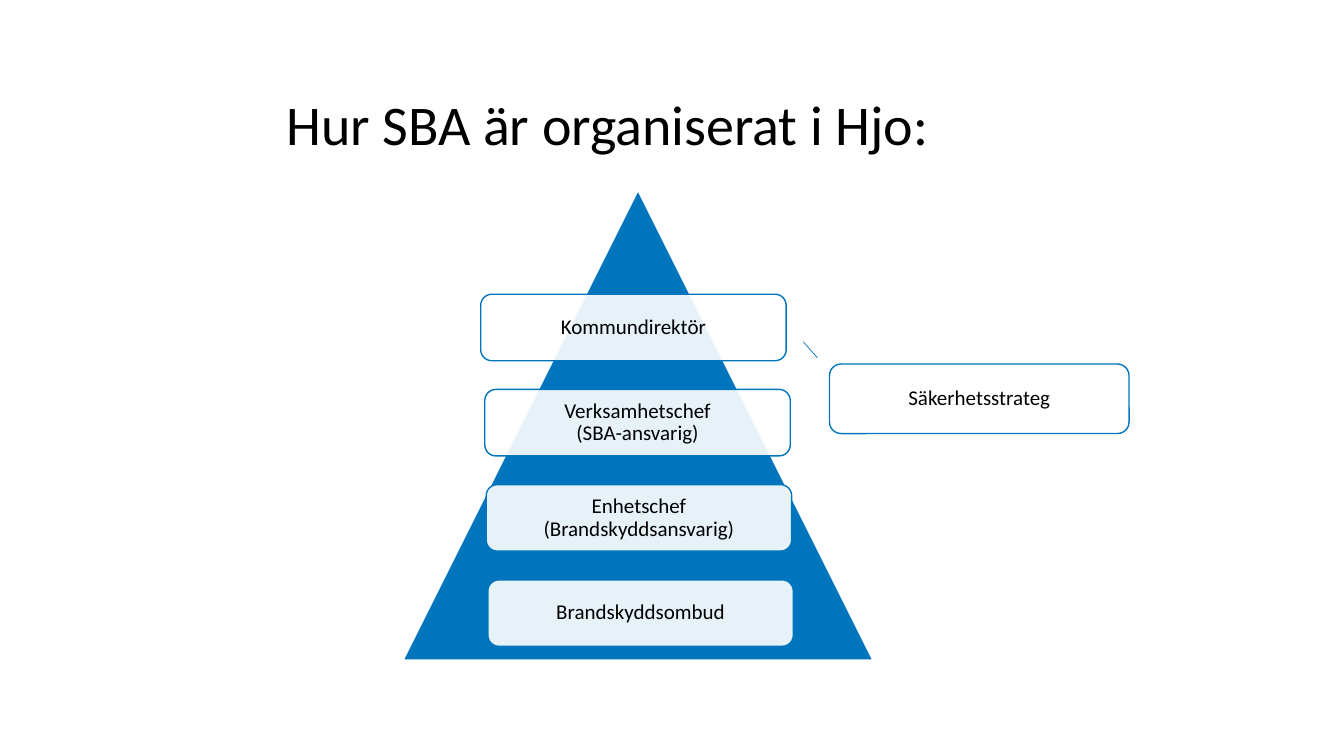
import pptx
import pptx.dml.color
import pptx.enum.shapes
import pptx.enum.text
import pptx.oxml
import pptx.oxml.ns
import pptx.util

Pt = pptx.util.Pt
RGBColor = pptx.dml.color.RGBColor
Shape = pptx.enum.shapes.MSO_SHAPE
Align = pptx.enum.text.PP_ALIGN
qn = pptx.oxml.ns.qn

BLUE = RGBColor(0x00, 0x75, 0xBD)
WHITE = RGBColor(0xFF, 0xFF, 0xFF)
BLACK = RGBColor(0x00, 0x00, 0x00)


def write_text(text_frame, text, size, font="Calibri", color=BLACK,
               align=Align.LEFT, margin=7.2, space_after=0):
    text_frame.word_wrap = True
    text_frame.vertical_anchor = pptx.enum.text.MSO_ANCHOR.MIDDLE
    text_frame.margin_left = text_frame.margin_right = Pt(margin)
    text_frame.margin_top = text_frame.margin_bottom = Pt(min(margin, 3.6))
    paragraph = text_frame.paragraphs[0]
    paragraph.text = text
    paragraph.alignment = align
    paragraph.line_spacing = 0.9
    paragraph.space_after = Pt(space_after)
    for run in paragraph.runs:
        run.font.name = font
        run.font.size = Pt(size)
        run.font.color.rgb = color
    for line_break in paragraph._p.findall(qn("a:br")):
        properties = pptx.oxml.parse_xml(
            f'<a:rPr {pptx.oxml.ns.nsdecls("a")} sz="{size * 100}"/>')
        line_break.append(properties)


class PyramidSlide:
    def __init__(self, presentation):
        self.slide = presentation.slides.add_slide(presentation.slide_layouts[5])
        self.shapes = self.slide.shapes

    def title(self, text, left, top, width, height):
        title = self.shapes.title
        title.left, title.top = Pt(left), Pt(top)
        title.width, title.height = Pt(width), Pt(height)
        write_text(title.text_frame, text, size=40)

    def shape(self, kind, left, top, width, height, fill, line):
        shape = self.shapes.add_shape(
            kind, Pt(left), Pt(top), Pt(width), Pt(height))
        shape.shadow.inherit = False
        shape.fill.solid()
        shape.fill.fore_color.rgb = fill
        shape.line.color.rgb = line
        shape.line.width = Pt(1)
        return shape

    def role(self, text, left, top, width, height):
        box = self.shape(Shape.ROUNDED_RECTANGLE, left, top, width, height,
                         WHITE, BLUE)
        color = box._element.spPr.find(qn("a:solidFill"))[0]
        color.append(pptx.oxml.parse_xml(
            f'<a:alpha {pptx.oxml.ns.nsdecls("a")} val="90000"/>'))
        write_text(box.text_frame, text, size=15, align=Align.CENTER,
                   margin=4.3, space_after=5.25)

    def line(self, start_x, start_y, end_x, end_y):
        connector = self.shapes.add_connector(
            pptx.enum.shapes.MSO_CONNECTOR.STRAIGHT,
            Pt(start_x), Pt(start_y), Pt(end_x), Pt(end_y))
        connector.line.color.rgb = BLUE
        connector.line.width = Pt(0.5)
        connector._element.spPr.append(pptx.oxml.parse_xml(
            f'<a:effectLst {pptx.oxml.ns.nsdecls("a")}/>'))


def main():
    presentation = pptx.Presentation()
    presentation.slide_width = Pt(960)
    presentation.slide_height = Pt(540)

    pyramid = PyramidSlide(presentation)
    pyramid.title("Hur SBA är organiserat i Hjo:", 197.3, 46, 564.5, 90)
    pyramid.shape(Shape.ISOSCELES_TRIANGLE, 288, 136, 335.5, 335.5, BLUE, WHITE)
    pyramid.role("Säkerhetsstrateg", 592.5, 260, 214, 49.7)

    levels = [
        ("Kommundirektör", 343.4),
        ("Verksamhetschef\n(SBA-ansvarig)", 346.3),
        ("Enhetschef\n(Brandskyddsansvarig)", 347.3),
        ("Brandskyddsombud", 348.5),
    ]
    for index, (text, left) in enumerate(levels):
        pyramid.role(text, left, 210.2 + 68 * index, 218.2, 47.5)

    pyramid.line(573.8, 244.1, 583.9, 255.6)
    presentation.save("out.pptx")


if __name__ == "__main__":
    main()
